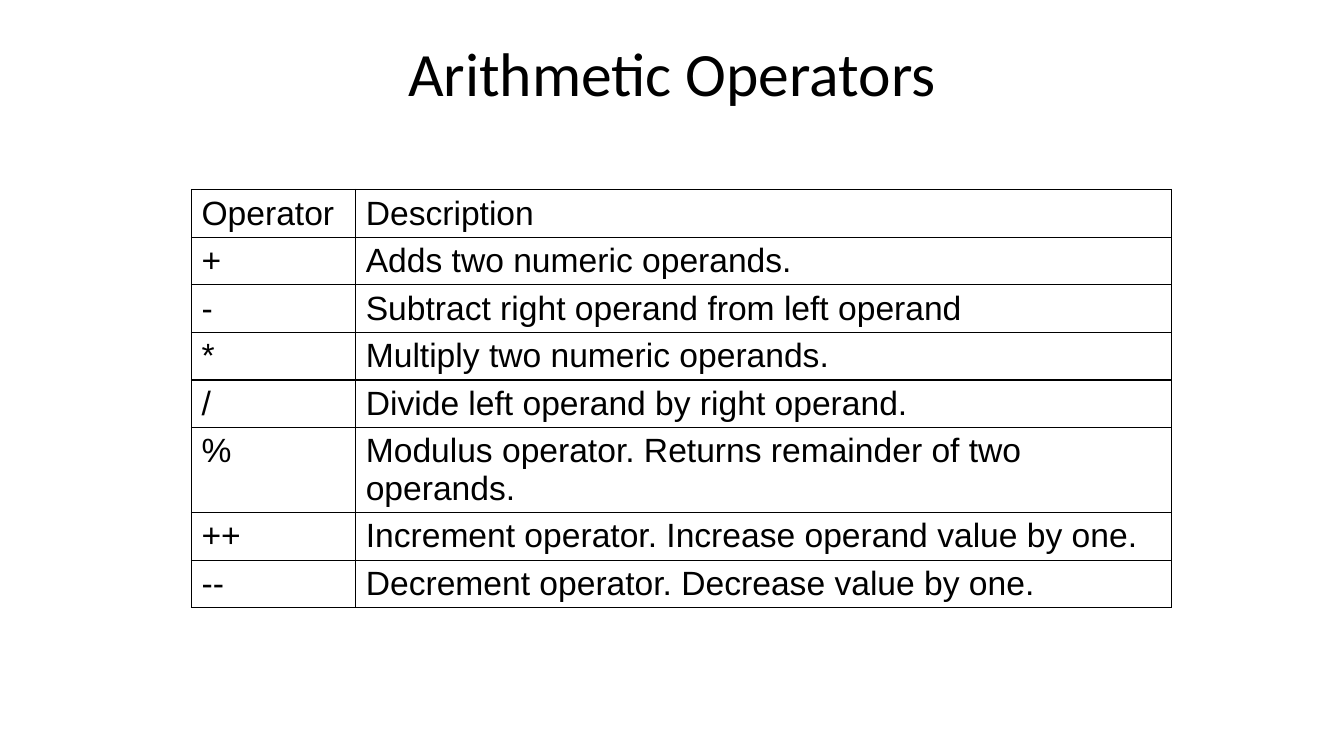
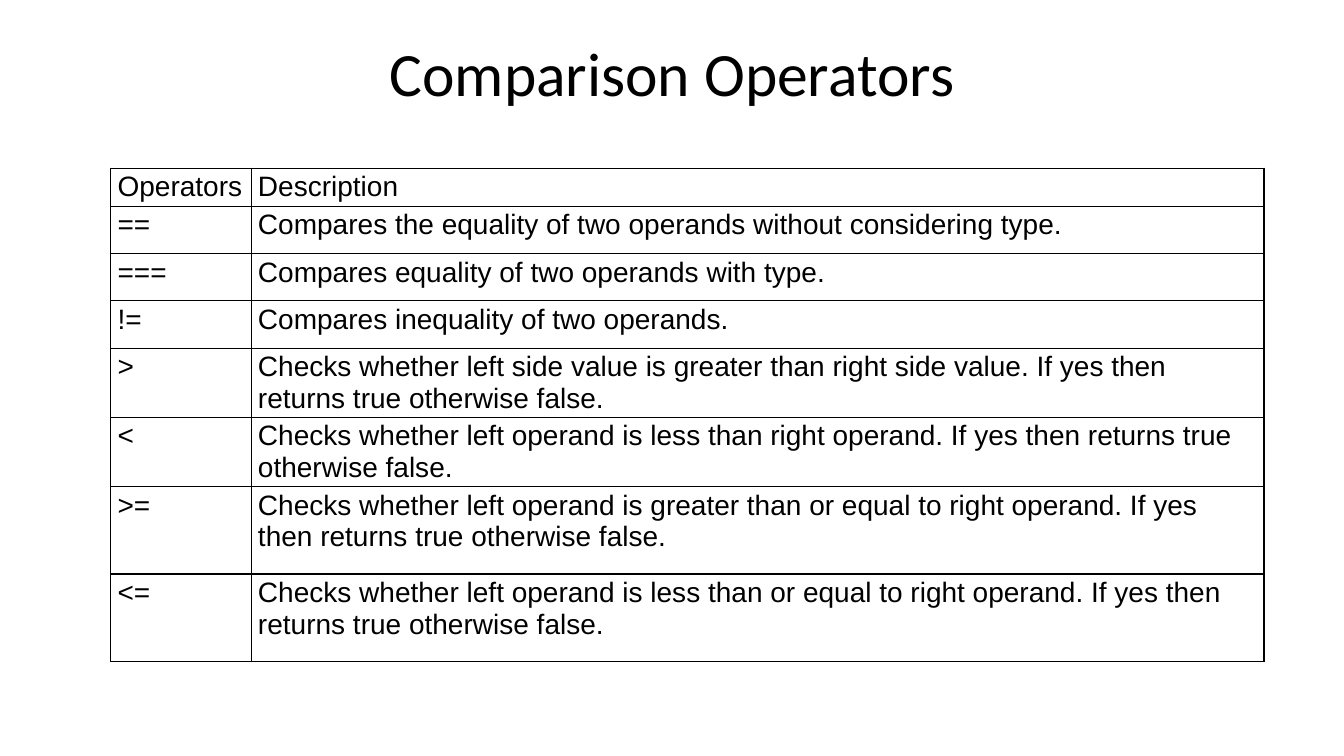
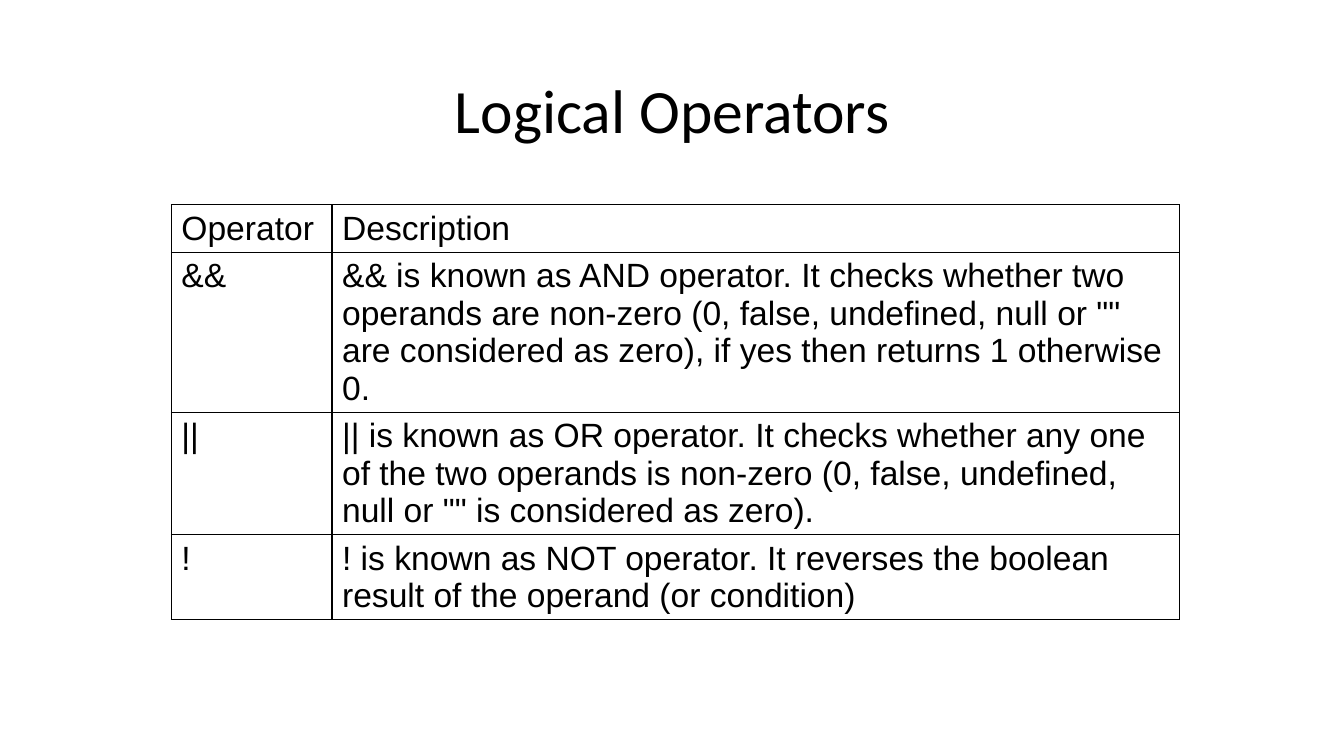
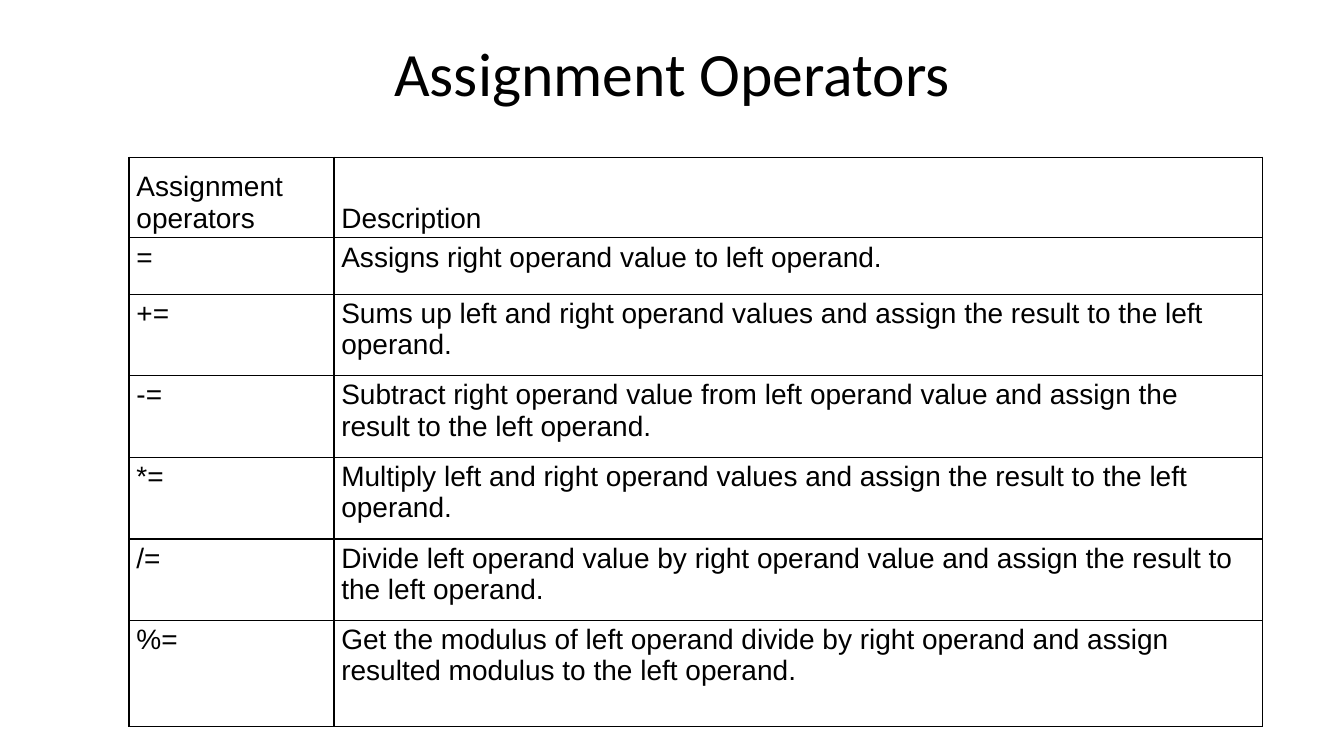
"""Build four slides of operator reference tables."""
from dataclasses import dataclass

from lxml import etree
from pptx import Presentation, util as u
from pptx.dml.color import RGBColor
from pptx.enum import text as t
from pptx.oxml import ns
from pptx.slide import Slide
from pptx.table import _Cell as Cell
from pptx.text.text import TextFrame

BLACK = RGBColor(0x00, 0x00, 0x00)
WHITE = RGBColor(0xFF, 0xFF, 0xFF)
TITLE_FONT = "Calibri"
TABLE_FONT = "Arial"
SLIDE_SIZE = (960, 540)
TITLE_BOX = (66.24, 28.8, 828, 104.4)
TITLE_ONLY_LAYOUT = 5
BORDER_WIDTH = 1


@dataclass(frozen=True)
class OperatorTable:
    """Content and measures, in points, of one table slide."""

    title: str
    box: tuple[float, float, float, float]
    operator_width: float
    row_heights: list[float]
    size: float
    insets: tuple[float, float]
    rows: list[tuple[str, str]]
    raised_title: bool = True


TABLES = [
    OperatorTable(
        title="Arithmetic Operators",
        box=(136.8, 135.4, 699.8, 288),
        operator_width=117.3,
        row_heights=[24] * 8,
        size=24,
        insets=(7.2, 3.6),
        rows=[
            ("Operator", "Description"),
            ("+", "Adds two numeric operands."),
            ("-", "Subtract right operand from left operand"),
            ("*", "Multiply two numeric operands."),
            ("/", "Divide left operand by right operand."),
            ("%", "Modulus operator. Returns remainder of two operands."),
            ("++", "Increment operator. Increase operand value by one."),
            ("--", "Decrement operator. Decrease value by one."),
        ],
    ),
    OperatorTable(
        title="Comparison Operators",
        box=(79.2, 120.2, 823.7, 361.4),
        operator_width=100.3,
        row_heights=[19.4] + [33.8] * 3 + [48.2] * 2 + [62.6] * 2,
        size=20,
        insets=(4.8, 2.4),
        rows=[
            ("Operators", "Description"),
            ("==", "Compares the equality of two operands without considering type."),
            ("===", "Compares equality of two operands with type."),
            ("!=", "Compares inequality of two operands."),
            (">", "Checks whether left side value is greater than right side value. "
                  "If yes then returns true otherwise false."),
            ("<", "Checks whether left operand is less than right operand. "
                  "If yes then returns true otherwise false."),
            (">=", "Checks whether left operand is greater than or equal to right operand. "
                   "If yes then returns true otherwise false."),
            ("<=", "Checks whether left operand is less than or equal to right operand. "
                   "If yes then returns true otherwise false."),
        ],
    ),
    OperatorTable(
        title="Logical Operators",
        box=(122.4, 146.2, 720, 288),
        operator_width=114.8,
        row_heights=[24] * 4,
        size=24,
        insets=(7.2, 3.6),
        rows=[
            ("Operator", "Description"),
            ("&&", "&& is known as AND operator. It checks whether two operands are non-zero "
                   "(0, false, undefined, null or \"\" are considered as zero), "
                   "if yes then returns 1 otherwise 0."),
            ("||", "|| is known as OR operator. It checks whether any one of the two operands "
                   "is non-zero (0, false, undefined, null or \"\" is considered as zero)."),
            ("!", "! is known as NOT operator. It reverses the boolean result of the operand "
                  "(or condition)"),
        ],
        raised_title=False,
    ),
    OperatorTable(
        title="Assignment Operators",
        box=(92.2, 112.3, 809.6, 406.1),
        operator_width=146.3,
        row_heights=[57.6, 40.3] + [58.3] * 4 + [75.6],
        size=20,
        insets=(5.3, 2.7),
        rows=[
            ("Assignment operators", "Description"),
            ("=", "Assigns right operand value to left operand."),
            ("+=", "Sums up left and right operand values and assign the result "
                   "to the left operand."),
            ("-=", "Subtract right operand value from left operand value and assign the result "
                   "to the left operand."),
            ("*=", "Multiply left and right operand values and assign the result "
                   "to the left operand."),
            ("/=", "Divide left operand value by right operand value and assign the result "
                   "to the left operand."),
            ("%=", "Get the modulus of left operand divide by right operand and assign "
                   "resulted modulus to the left operand."),
        ],
    ),
]


def write_text(
    frame: TextFrame,
    content: str,
    *,
    font: str,
    size: float,
    color: RGBColor = BLACK,
    alignment: t.PP_ALIGN = t.PP_ALIGN.LEFT,
    line_spacing: float = 1.0,
) -> None:
    frame.text = content
    paragraph = frame.paragraphs[0]
    paragraph.alignment = alignment
    paragraph.line_spacing = line_spacing
    run_font = paragraph.runs[0].font
    run_font.name = font
    run_font.size = u.Pt(size)
    run_font.bold = False
    run_font.color.rgb = color


def add_title(slide: Slide, content: str, raised: bool) -> None:
    shape = slide.shapes.title
    shape.left, shape.top, shape.width, shape.height = map(u.Pt, TITLE_BOX)
    frame = shape.text_frame
    frame.word_wrap = True
    frame.auto_size = t.MSO_AUTO_SIZE.NONE
    frame.margin_left = frame.margin_right = u.Pt(7.2)
    frame.margin_top = frame.margin_bottom = u.Pt(2 if raised else 3.6)
    frame.vertical_anchor = t.MSO_ANCHOR.TOP if raised else t.MSO_ANCHOR.MIDDLE
    write_text(frame, content, font=TITLE_FONT, size=44,
               alignment=t.PP_ALIGN.CENTER, line_spacing=0.9)


def add_borders(cell: Cell) -> None:
    properties = cell._tc.get_or_add_tcPr()
    for side in ("a:lnL", "a:lnR", "a:lnT", "a:lnB"):
        line = etree.SubElement(properties, ns.qn(side), w=str(u.Pt(BORDER_WIDTH)))
        fill = etree.SubElement(line, ns.qn("a:solidFill"))
        etree.SubElement(fill, ns.qn("a:srgbClr"), val=str(BLACK))


def add_operator_table(slide: Slide, content: OperatorTable) -> None:
    left, top, width, height = map(u.Pt, content.box)
    shape = slide.shapes.add_table(len(content.rows), 2, left, top, width, height)
    table = shape.table
    table.first_row = table.horz_banding = False
    table.columns[0].width = u.Pt(content.operator_width)
    table.columns[1].width = width - u.Pt(content.operator_width)
    side_inset, edge_inset = map(u.Pt, content.insets)
    for row_index, texts in enumerate(content.rows):
        table.rows[row_index].height = u.Pt(content.row_heights[row_index])
        for column_index, cell_text in enumerate(texts):
            cell = table.cell(row_index, column_index)
            cell.margin_left = cell.margin_right = side_inset
            cell.margin_top = cell.margin_bottom = edge_inset
            cell.vertical_anchor = t.MSO_ANCHOR.TOP if row_index else t.MSO_ANCHOR.BOTTOM
            add_borders(cell)
            cell.fill.background()
            write_text(cell.text_frame, cell_text, font=TABLE_FONT, size=content.size)
    shape.height = height


def main() -> None:
    presentation = Presentation()
    presentation.slide_width, presentation.slide_height = map(u.Pt, SLIDE_SIZE)
    background = presentation.slide_master.background.fill
    background.solid()
    background.fore_color.rgb = WHITE
    layout = presentation.slide_layouts[TITLE_ONLY_LAYOUT]
    for content in TABLES:
        slide = presentation.slides.add_slide(layout)
        add_title(slide, content.title, content.raised_title)
        add_operator_table(slide, content)
    presentation.save("out.pptx")


if __name__ == "__main__":
    main()
